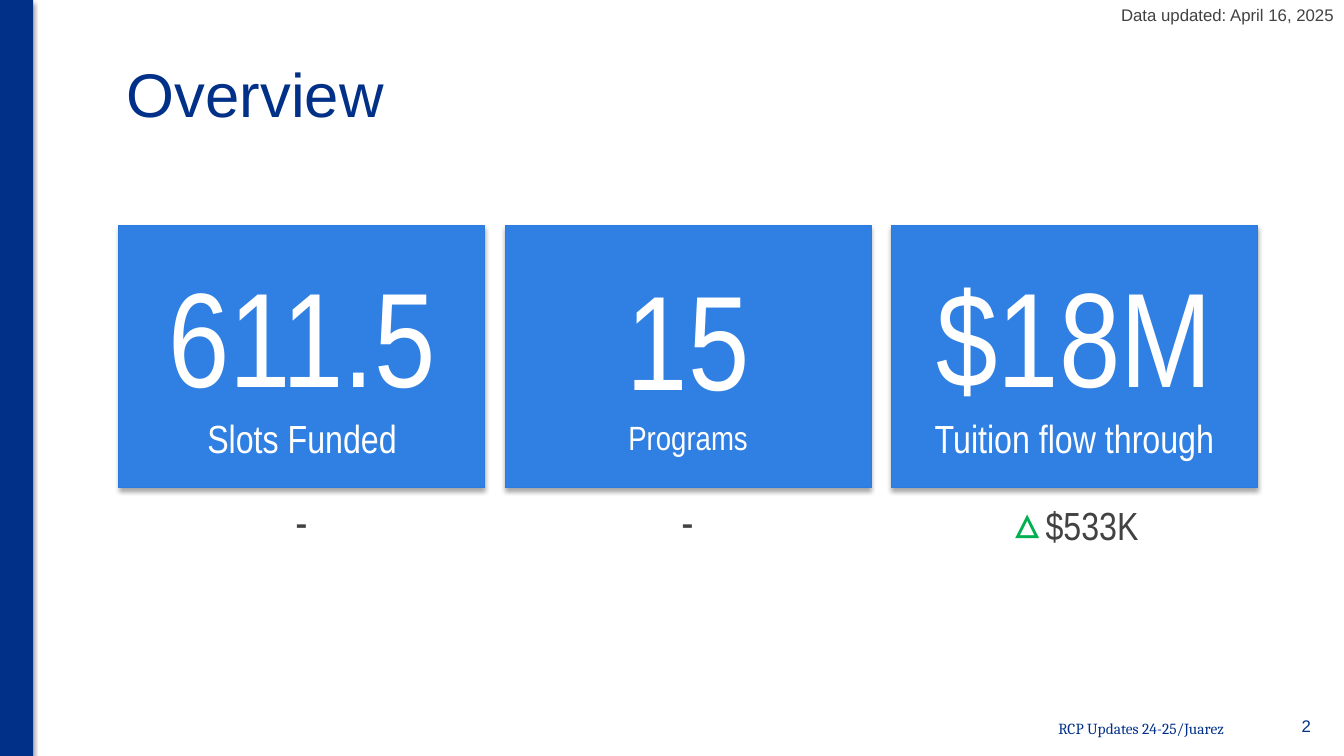
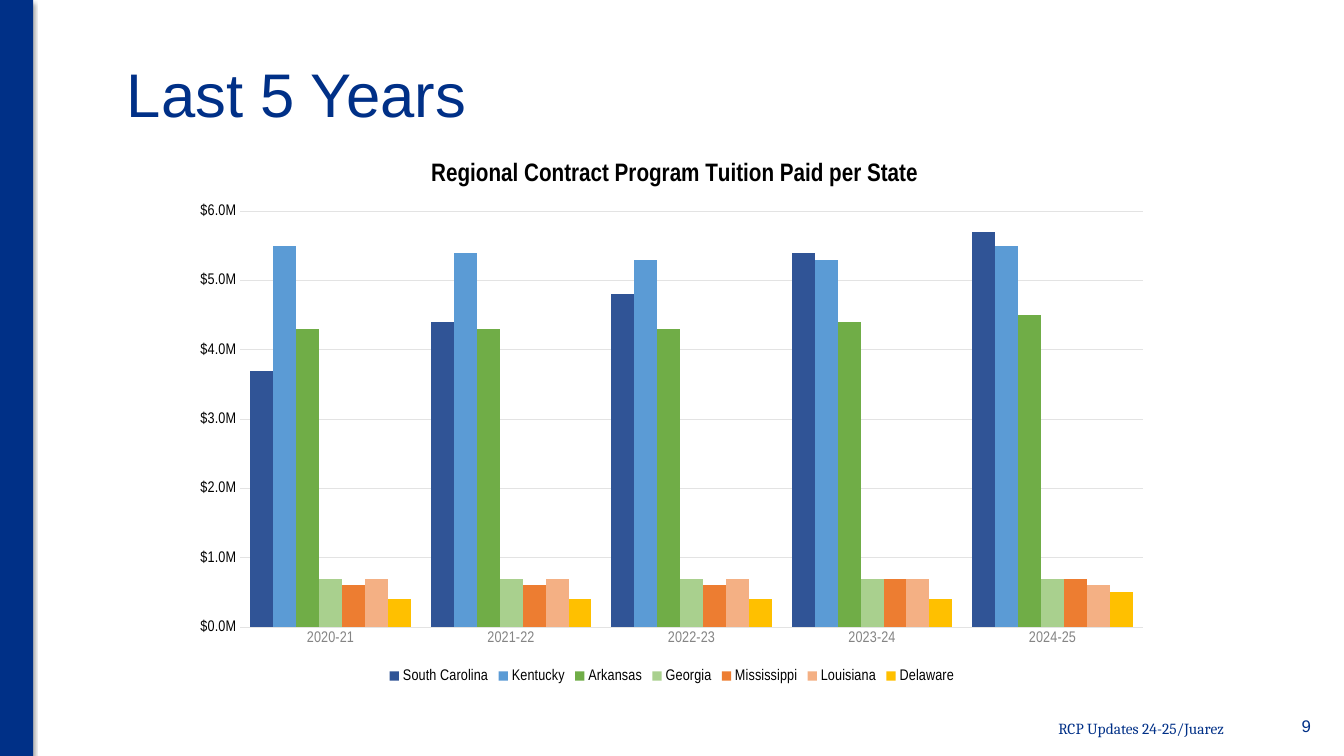
from lxml import etree
from pptx import Presentation
from pptx.chart.data import CategoryChartData
from pptx.dml.color import RGBColor
from pptx.enum.chart import XL_CHART_TYPE, XL_LEGEND_POSITION, XL_TICK_MARK
from pptx.enum.shapes import MSO_SHAPE
from pptx.enum.text import MSO_ANCHOR, PP_ALIGN
from pptx.oxml import parse_xml
from pptx.oxml.ns import nsdecls, qn
from pptx.util import Inches, Pt

RECT = MSO_SHAPE.RECTANGLE
LEFT, MID, RIGHT = PP_ALIGN.LEFT, PP_ALIGN.CENTER, PP_ALIGN.RIGHT
TOP, CENTER = MSO_ANCHOR.TOP, MSO_ANCHOR.MIDDLE
COLUMN = XL_CHART_TYPE.COLUMN_CLUSTERED
BOTTOM = XL_LEGEND_POSITION.BOTTOM
NO_TICK = XL_TICK_MARK.NONE

NAVY = RGBColor(0x00, 0x30, 0x87)
BLUE = RGBColor(0x30, 0x7F, 0xE2)
EDGE = RGBColor(0x2B, 0x7C, 0xE1)
WHITE = RGBColor(0xFF, 0xFF, 0xFF)
BLACK = RGBColor(0x00, 0x00, 0x00)
DARK = RGBColor(0x42, 0x42, 0x42)
GRAY = RGBColor(0x84, 0x84, 0x84)
PALE = RGBColor(0xE3, 0xE3, 0xE3)
GREEN = RGBColor(0x00, 0xB0, 0x50)
SANS, SLIM, SERIF = "Arial", "Arial Narrow", "Cambria"


def style(font, size, face, color, bold=False):
    font.size = Pt(size)
    font.name = face
    font.color.rgb = color
    font.bold = bold


def label(slide, box, words, size, face, color, align, anchor=CENTER):
    frame = slide.shapes.add_textbox(*map(Inches, box)).text_frame
    frame.word_wrap = True
    frame.vertical_anchor = anchor
    frame.text = words
    para = frame.paragraphs[0]
    para.alignment = align
    style(para.runs[0].font, size, face, color)
    return para


deck = Presentation()
deck.slide_width = Inches(13.33)
deck.slide_height = Inches(7.5)

slides = []
blocks = []
for title, number in (("Overview", "2"), ("Last 5 Years", "9")):
    slide = deck.slides.add_slide(deck.slide_layouts[6])
    bar = slide.shapes.add_shape(RECT, 0, 0, Inches(0.33), Inches(7.5))
    bar.fill.solid()
    bar.fill.fore_color.rgb = NAVY
    bar.line.fill.background()
    blocks.append(bar)
    label(slide, (7.65, 7, 4.59, 0.45), "RCP Updates 24-25/Juarez", 11, SERIF, NAVY, RIGHT)
    label(slide, (1.16, 0.3, 11.29, 1.25), title, 44, SANS, NAVY, LEFT)
    label(slide, (12.27, 6.98, 0.83, 0.45), number, 12, SANS, NAVY, RIGHT)
    slides.append(slide)
over, years = slides

cards = [
    ("611.5", "Slots Funded", 28, "-", 32, DARK),
    ("15", "Programs", 24, "-", 32, DARK),
    ("$18M", "Tuition flow through", 28, "▵", 36, GREEN),
]
for i, (count, name, size, mark, big, color) in enumerate(cards):
    left = 1.18 + i * 3.83
    card = over.shapes.add_shape(RECT, Inches(left), Inches(2.24), Inches(3.63), Inches(2.6))
    card.fill.solid()
    card.fill.fore_color.rgb = BLUE
    card.line.color.rgb = EDGE
    card.line.width = Pt(0.75)
    blocks.append(card)
    frame = card.text_frame
    frame.word_wrap = True
    frame.vertical_anchor = CENTER
    frame.text = f"{count}\n{name}"
    for para, points in zip(frame.paragraphs, (96, size)):
        para.alignment = MID
        style(para.runs[0].font, points, SLIM, WHITE)
    change = label(over, (left + 0.2, 4.84, 3.22, 0.64), mark, big, SLIM, color, MID)

gain = change.add_run()
gain.text = "$533K"
style(gain.font, 28, SLIM, DARK)
label(over, (10.33, 0, 3, 0.3), "Data updated: April 16, 2025", 12, SANS, DARK, RIGHT, TOP)

for block in blocks:
    block.shadow.inherit = False
    block._element.spPr.find(qn("a:effectLst")).append(parse_xml(
        f'<a:outerShdw {nsdecls("a")} blurRad="40000" dist="23000" dir="5400000" rotWithShape="0">'
        '<a:srgbClr val="000000"><a:alpha val="35000"/></a:srgbClr></a:outerShdw>'))

data = CategoryChartData(number_format='"$"0.0,,"M"')
data.categories = ["2020-21", "2021-22", "2022-23", "2023-24", "2024-25"]
states = [
    ("South Carolina", (3.7, 4.4, 4.8, 5.4, 5.7), "305496"),
    ("Kentucky", (5.5, 5.4, 5.3, 5.3, 5.5), "5B9BD5"),
    ("Arkansas", (4.3, 4.3, 4.3, 4.4, 4.5), "70AD47"),
    ("Georgia", (0.7, 0.7, 0.7, 0.7, 0.7), "A9D08E"),
    ("Mississippi", (0.6, 0.6, 0.6, 0.7, 0.7), "ED7D31"),
    ("Louisiana", (0.7, 0.7, 0.7, 0.7, 0.6), "F4B084"),
    ("Delaware", (0.4, 0.4, 0.4, 0.4, 0.5), "FFC000"),
]
for name, paid, shade in states:
    data.add_series(name, [round(value * 1000000) for value in paid])
area = map(Inches, (1.8, 1.39, 9.73, 5.43))
chart = years.shapes.add_chart(COLUMN, *area, data).chart
style(chart.font, 10, SANS, DARK)

chart.has_title = True
head = chart.chart_title
head.include_in_layout = False
head.text_frame.text = "Regional Contract Program Tuition Paid per State"
style(head.text_frame.paragraphs[0].runs[0].font, 18, SLIM, BLACK, True)

chart.has_legend = True
chart.legend.position = BOTTOM
chart.legend.include_in_layout = False
style(chart.legend.font, 11, SLIM, BLACK)

plot = chart.plots[0]
plot.gap_width = 86
plot.overlap = 0
plot.vary_by_categories = False
for series, (name, paid, shade) in zip(plot.series, states):
    series.format.fill.solid()
    series.format.fill.fore_color.rgb = RGBColor.from_string(shade)

cats, vals = chart.category_axis, chart.value_axis
for axis, color in ((cats, GRAY), (vals, BLACK)):
    axis.major_tick_mark = NO_TICK
    axis.minor_tick_mark = NO_TICK
    style(axis.tick_labels.font, 11, SLIM, color)
vals.minimum_scale = 0
vals.maximum_scale = 6000000
vals.major_unit = 1000000
vals.tick_labels.number_format = '"$"0.0,,"M"'
vals.tick_labels.number_format_is_linked = False
vals.format.line.fill.background()
for line in (cats.format.line, vals.major_gridlines.format.line):
    line.color.rgb = PALE
    line.width = Pt(0.75)

root = chart._chartSpace.chart
spots = [
    (root.find(qn("c:title")), 1, {"x": 0.25, "y": 0.03}),
    (root.plotArea, 0, {"layoutTarget": "inner", "x": 0.06, "y": 0.13, "w": 0.92, "h": 0.76}),
]
for node, index, parts in spots:
    for old in node.findall(qn("c:layout")):
        node.remove(old)
    layout = etree.Element(qn("c:layout"))
    manual = etree.SubElement(layout, qn("c:manualLayout"))
    modes = {f"{key}Mode": "edge" for key in ("x", "y")}
    target = {key: parts[key] for key in parts if key == "layoutTarget"}
    for key, value in {**target, **modes, **parts}.items():
        etree.SubElement(manual, qn(f"c:{key}")).set("val", str(value))
    node.insert(index, layout)

deck.save("out.pptx")
